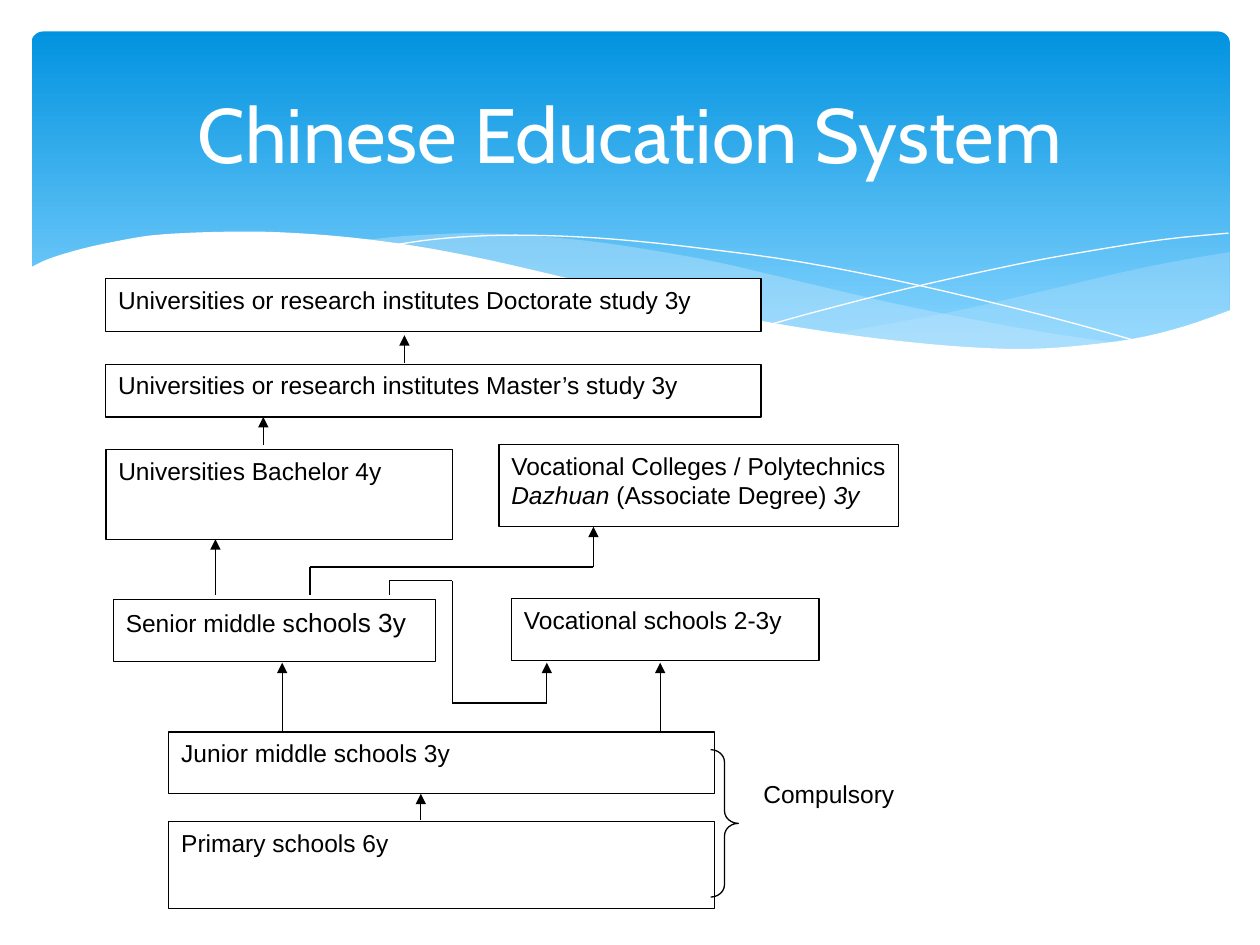
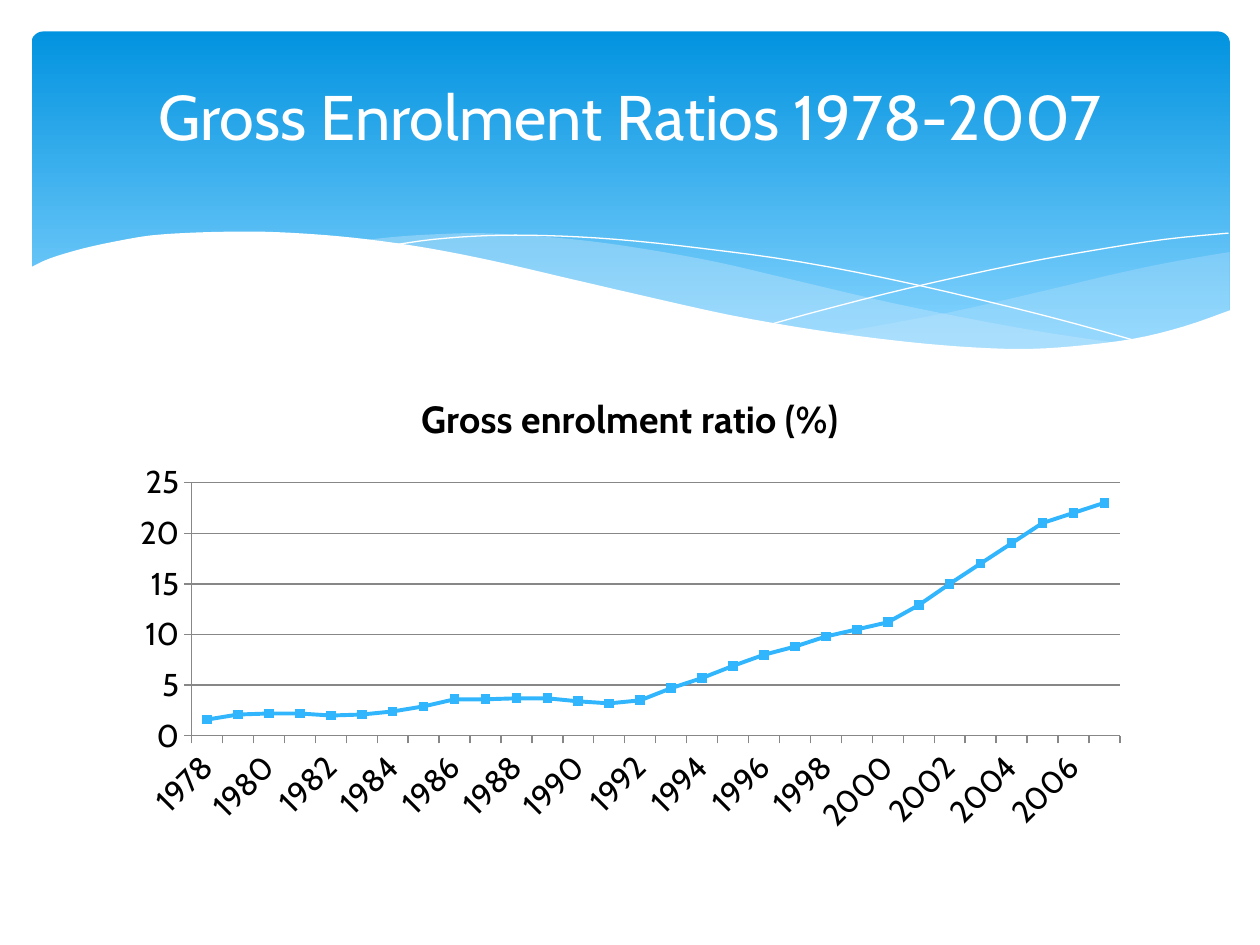
"""Build two slides on the Chinese education system."""
import dataclasses
import itertools
import typing

import lxml.etree
import pptx
import pptx.chart.data
import pptx.dml.color
import pptx.dml.fill
import pptx.enum.chart
import pptx.enum.shapes
import pptx.enum.text
import pptx.oxml.ns
import pptx.shapes.base
import pptx.slide
import pptx.text.text
import pptx.util

Inches = pptx.util.Inches
Pt = pptx.util.Pt
qn = pptx.oxml.ns.qn
Slide = pptx.slide.Slide
Spot = tuple[float, float]


@dataclasses.dataclass(frozen=True)
class Theme:
    """Hold the colours, fonts and sizes of both slides."""
    white: str = "FFFFFF"
    black: str = "000000"
    deep: str = "0293E0"
    pale: str = "83D3FE"
    mist: str = "C6E7FC"
    sky: str = "31B6FD"
    grey: str = "878787"
    head: str = "Cabin"
    body: str = "Arial"
    title: float = 44
    long: float = 36
    label: float = 14
    large: float = 15
    axis: float = 18
    chart: float = 21.6
    rule: float = 0.75
    trend: float = 2.25


THEME = Theme()


class Span(typing.NamedTuple):
    """A piece of text in one style."""
    text: str
    size: float = THEME.label
    slant: bool = False


class Box(typing.NamedTuple):
    """A text box of the flow chart."""
    left: float
    top: float
    width: float
    height: float
    spans: tuple[Span, ...]
    edge: bool = True


class Wave(typing.NamedTuple):
    """A band outline made of smooth arcs, or a bare white line."""
    arcs: tuple[tuple[Spot, ...], ...]
    fill: str | None = None
    alpha: int = 100


WAVES = (
    Wave((
        ((9.76, 2), (9.35, 2.07), (8.91, 2.16), (8.32, 2.3), (7.53, 2.48),
         (6.61, 2.65)),
        ((6.61, 2.65), (7.05, 2.71), (7.57, 2.76), (8.14, 2.78), (8.63, 2.75),
         (9.05, 2.69), (9.42, 2.59), (9.76, 2.47)),
    ), THEME.mist, 29),
    Wave((
        ((8.93, 2.73), (8.37, 2.65), (7.75, 2.54), (7.06, 2.4), (6.29, 2.22),
         (5.69, 2.08), (5.14, 1.98), (4.65, 1.91), (4.2, 1.87), (3.8, 1.85),
         (3.44, 1.86), (3.13, 1.88), (2.86, 1.91)),
        ((2.86, 1.91), (3.42, 1.99), (4.04, 2.11), (4.91, 2.32), (5.66, 2.48),
         (6.34, 2.61), (6.95, 2.7), (7.48, 2.76), (7.96, 2.78), (8.48, 2.77),
         (8.93, 2.73)),
    ), THEME.mist, 40),
    Wave((
        ((3.09, 1.95), (3.44, 1.9), (3.87, 1.87), (4.33, 1.87), (4.89, 1.9),
         (5.56, 1.97), (6.36, 2.08), (7.27, 2.26), (8.31, 2.51), (9.07, 2.72)),
    )),
    Wave((
        ((6.13, 2.57), (6.53, 2.46), (7.2, 2.29), (8.06, 2.1), (8.66, 1.99),
         (9.24, 1.9), (9.75, 1.85)),
    )),
    Wave((
        ((9.77, 2.46), (9.4, 2.59), (8.99, 2.69), (8.5, 2.75), (8.09, 2.77),
         (7.61, 2.75), (7.08, 2.7), (6.48, 2.62), (5.79, 2.5), (5.03, 2.33),
         (4.47, 2.2), (3.91, 2.07), (3.4, 1.97), (2.92, 1.9), (2.5, 1.86),
         (2.11, 1.84), (1.77, 1.84), (1.46, 1.85), (1.19, 1.87), (0.95, 1.91),
         (0.67, 1.97), (0.4, 2.05), (0.23, 2.13)),
        ((0.23, 3.29), (9.77, 3.29)),
    ), THEME.white),
)

BOXES = (
    Box(1.34, 6.52, 4.33, 0.69, (Span("Primary schools 6y"),)),
    Box(1.34, 5.81, 4.33, 0.49, (Span("Junior middle schools 3y"),)),
    Box(5.96, 6.13, 1.25, 0.43, (Span("Compulsory"),), False),
    Box(0.9, 4.76, 2.56, 0.49,
        (Span("Senior middle s"), Span("chools 3y", THEME.large))),
    Box(3.96, 3.53, 3.17, 0.65,
        (Span("Vocational Colleges / Polytechnics "), Span("Dazhuan ", slant=True),
         Span("(Associate Degree) "), Span("3y", slant=True))),
    Box(0.84, 2.89, 5.2, 0.42,
        (Span("Universities or research institutes Master’s study 3y"),)),
    Box(0.84, 3.57, 2.75, 0.71, (Span("Universities Bachelor 4y"),)),
    Box(0.84, 2.21, 5.2, 0.42,
        (Span("Universities or research institutes Doctorate study 3y"),)),
    Box(4.06, 4.75, 2.44, 0.49, (Span("Vocational schools 2-3y"),)),
)

ROUTES: tuple[tuple[Spot, ...], ...] = (
    ((3.34, 6.51), (3.34, 6.3)),
    ((2.24, 5.8), (2.24, 5.26)),
    ((5.24, 5.8), (5.24, 5.26)),
    ((3.09, 4.72), (3.09, 4.61), (3.59, 4.61), (3.59, 5.58), (4.34, 5.58),
     (4.34, 5.26)),
    ((1.71, 4.72), (1.71, 4.28)),
    ((2.46, 4.72), (2.46, 4.5), (4.71, 4.5), (4.71, 4.18)),
    ((2.09, 3.53), (2.09, 3.31)),
    ((3.21, 2.88), (3.21, 2.66)),
)

START = 1978
RATIOS = (1.6, 2.1, 2.2, 2.2, 2, 2.1, 2.4, 2.9, 3.6, 3.6, 3.7, 3.7, 3.4, 3.2, 3.5,
          4.7, 5.7, 6.9, 8, 8.8, 9.8, 10.5, 11.2, 12.9, 15, 17, 19, 21, 22, 23)


def tint(code: str) -> pptx.dml.color.RGBColor:
    """Turn a hex code into a colour."""
    return pptx.dml.color.RGBColor.from_string(code)


def paint(fill: pptx.dml.fill.FillFormat, code: str) -> None:
    """Fill with one solid colour."""
    fill.solid()
    fill.fore_color.rgb = tint(code)


def style(font: pptx.text.text.Font, name: str, size: float, code: str) -> None:
    """Set the face, size and colour of a font."""
    font.name, font.size, font.color.rgb = name, Pt(size), tint(code)


def stroke(shape: pptx.shapes.base.BaseShape, code: str, width: float) -> None:
    """Set the line of a shape."""
    shape.line.color.rgb = tint(code)
    shape.line.width = Pt(width)


def curve(knots: tuple[Spot, ...], steps: int = 4) -> list[Spot]:
    """Run a smooth spline through the knots."""
    if len(knots) < 3:
        return list(knots)
    ends = (knots[0], *knots, knots[-1])
    spots = [knots[0]]
    for a, b, c, d in zip(ends, ends[1:], ends[2:], ends[3:]):
        for step in range(1, steps + 1):
            t = step / steps
            x, y = (q + t * ((r - p) / 2 + t * (p - 2.5 * q + 2 * r - s / 2
                    + t * (1.5 * (q - r) + (s - p) / 2)))
                    for p, q, r, s in zip(a, b, c, d))
            spots.append((x, y))
    return spots


def draw_wave(slide: Slide, wave: Wave) -> None:
    """Draw one wave of the band."""
    spots = [(Inches(x), Inches(y))
             for x, y in itertools.chain.from_iterable(map(curve, wave.arcs))]
    maker = slide.shapes.build_freeform(*spots[0])
    maker.add_line_segments(spots[1:], close=wave.fill is not None)
    shape = maker.convert_to_shape()
    shape.shadow.inherit = False
    if wave.fill is None:
        shape.fill.background()
        stroke(shape, THEME.white, 0)
        return
    paint(shape.fill, wave.fill)
    shape.line.fill.background()
    if wave.alpha < 100:
        shade = next(shape.fill._xPr.iter(qn("a:srgbClr")))
        lxml.etree.SubElement(shade, qn("a:alpha"), val=str(wave.alpha * 1000))


def draw_band(slide: Slide) -> None:
    """Draw the blue band with its waves."""
    band = slide.shapes.add_shape(
        pptx.enum.shapes.MSO_SHAPE.ROUNDED_RECTANGLE,
        Inches(0.25), Inches(0.25), Inches(9.51), Inches(2.7))
    band.adjustments[0] = 0.034
    band.shadow.inherit = False
    band.line.fill.background()
    band.fill.gradient()
    band.fill.gradient_angle = 270
    stops = zip(band.fill.gradient_stops, (THEME.deep, THEME.pale), (0, 0.9))
    for stop, code, place in stops:
        stop.color.rgb = tint(code)
        stop.position = place
    for wave in WAVES:
        draw_wave(slide, wave)


def draw_title(slide: Slide, text: str, size: float, lift: float = 0) -> None:
    """Write the slide title, raised by the given lift."""
    frame = slide.shapes.add_textbox(
        Inches(0.5), Inches(0.37), Inches(9), Inches(1.37)).text_frame
    frame.word_wrap = True
    frame.vertical_anchor = pptx.enum.text.MSO_ANCHOR.MIDDLE
    frame.margin_bottom = Inches(0.05 + 2 * lift)
    frame.text = text
    line = frame.paragraphs[0]
    line.alignment = pptx.enum.text.PP_ALIGN.CENTER
    style(line.runs[0].font, THEME.head, size, THEME.white)


def draw_box(slide: Slide, box: Box) -> None:
    """Draw one box with its text."""
    shape = slide.shapes.add_shape(
        pptx.enum.shapes.MSO_SHAPE.RECTANGLE, *map(Inches, box[:4]))
    shape.shadow.inherit = False
    paint(shape.fill, THEME.white)
    if box.edge:
        stroke(shape, THEME.black, THEME.rule)
    else:
        shape.line.fill.background()
    shape.text_frame.vertical_anchor = pptx.enum.text.MSO_ANCHOR.TOP
    line = shape.text_frame.paragraphs[0]
    line.alignment = pptx.enum.text.PP_ALIGN.JUSTIFY
    for span in box.spans:
        run = line.add_run()
        run.text = span.text
        style(run.font, THEME.body, span.size, THEME.black)
        run.font.italic = span.slant


def draw_route(slide: Slide, route: tuple[Spot, ...]) -> None:
    """Draw a bent line that ends in an arrowhead."""
    for start, end in itertools.pairwise(route):
        link = slide.shapes.add_connector(
            pptx.enum.shapes.MSO_CONNECTOR.STRAIGHT, *map(Inches, start + end))
        stroke(link, THEME.black, THEME.rule)
        lxml.etree.SubElement(link._element.spPr, qn("a:effectLst"))
    lxml.etree.SubElement(link.line._get_or_add_ln(), qn("a:tailEnd"), type="triangle")


def draw_brace(slide: Slide) -> None:
    """Draw the brace beside the compulsory years."""
    brace = slide.shapes.add_shape(
        pptx.enum.shapes.MSO_SHAPE.RIGHT_BRACE,
        Inches(5.64), Inches(5.95), Inches(0.22), Inches(1.17))
    brace.adjustments[0] = 0.45
    brace.shadow.inherit = False
    brace.fill.background()
    stroke(brace, THEME.black, THEME.rule)


def draw_chart(slide: Slide) -> None:
    """Plot the enrolment ratio by year."""
    name = "Gross enrolment ratio (%)"
    data = pptx.chart.data.CategoryChartData()
    data.categories = [str(START + i) for i in range(len(RATIOS))]
    data.add_series(name, RATIOS)
    chart = slide.shapes.add_chart(
        pptx.enum.chart.XL_CHART_TYPE.LINE_MARKERS,
        Inches(0.95), Inches(2.93), Inches(8.1), Inches(3.77), data).chart
    style(chart.font, THEME.head, THEME.axis, THEME.black)
    chart.has_legend = False
    chart.has_title = True
    chart.chart_title.text_frame.text = name
    font = chart.chart_title.text_frame.paragraphs[0].runs[0].font
    style(font, THEME.head, THEME.chart, THEME.black)
    font.bold = True
    scale = chart.value_axis
    scale.minimum_scale, scale.maximum_scale, scale.major_unit = 0, 25, 5
    scale.has_major_gridlines = True
    for part in (scale, chart.category_axis, scale.major_gridlines):
        stroke(part.format, THEME.grey, THEME.rule)
    chart.plots[0].vary_by_categories = False
    trend = chart.plots[0].series[0]
    trend.smooth = False
    stroke(trend.format, THEME.sky, THEME.trend)
    trend.marker.style = pptx.enum.chart.XL_MARKER_STYLE.SQUARE
    trend.marker.size = 5
    paint(trend.marker.format.fill, THEME.sky)
    stroke(trend.marker.format, THEME.sky, THEME.rule)


def main() -> None:
    """Build and save the slides."""
    deck = pptx.Presentation()
    deck.slide_width, deck.slide_height = Inches(10), Inches(7.5)
    flow, graph = (deck.slides.add_slide(deck.slide_layouts[6]) for _ in range(2))
    for slide in (flow, graph):
        draw_band(slide)
    draw_title(flow, "Chinese Education System", THEME.title)
    for box in BOXES:
        draw_box(flow, box)
    draw_brace(flow)
    for route in ROUTES:
        draw_route(flow, route)
    draw_chart(graph)
    draw_title(graph, "Gross Enrolment Ratios 1978-2007", THEME.long, 0.14)
    deck.save("out.pptx")


if __name__ == "__main__":
    main()
